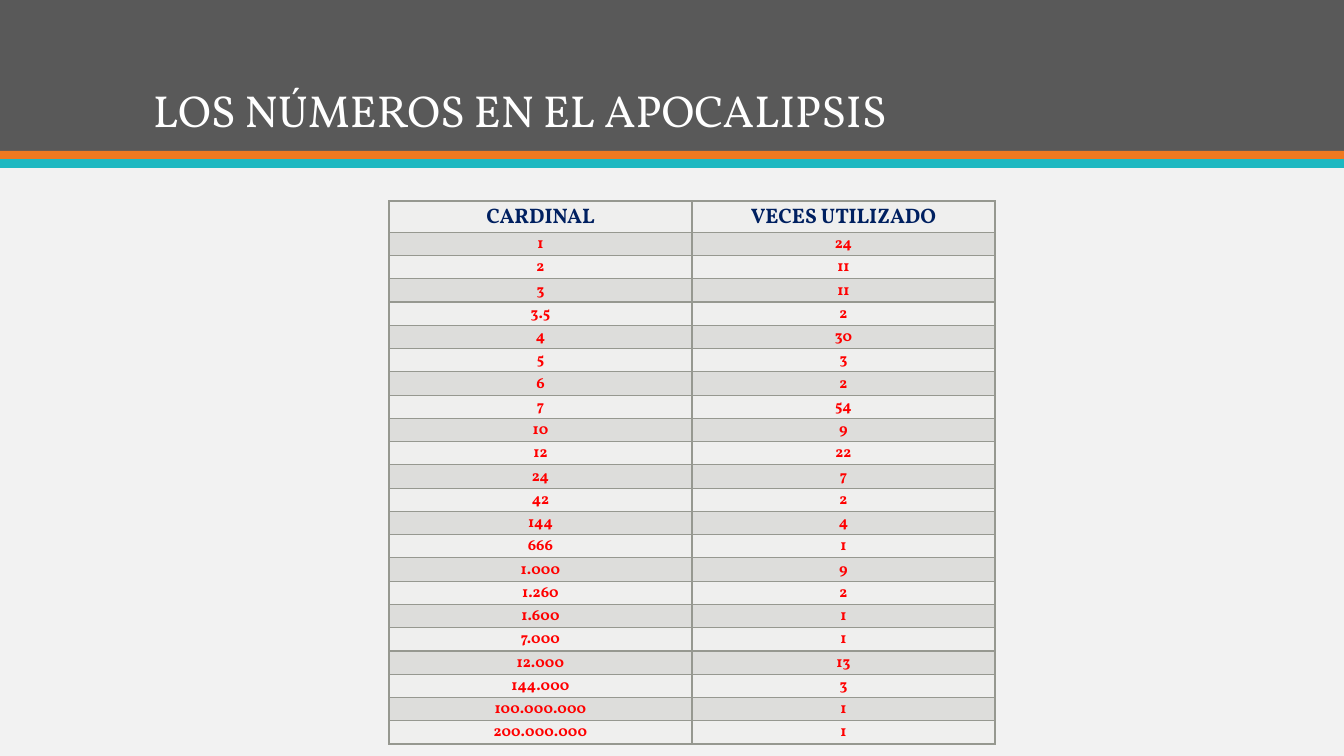
"""Build the slide on the numbers used in the Apocalypse."""
from lxml import etree
from pptx import Presentation
from pptx.dml.color import RGBColor
from pptx.enum.shapes import MSO_SHAPE
from pptx.enum.text import MSO_ANCHOR, MSO_AUTO_SIZE, PP_ALIGN
from pptx.oxml.ns import qn
from pptx.util import Emu, Pt

RECTANGLE = MSO_SHAPE.RECTANGLE
BOTTOM = MSO_ANCHOR.BOTTOM
NO_AUTOFIT = MSO_AUTO_SIZE.NONE
LEFT, CENTER = PP_ALIGN.LEFT, PP_ALIGN.CENTER
EMU_PER_PX = 914400 / 100.8
PAGE_WIDTH, PAGE_HEIGHT = 1344, 756
TITLE_ONLY = 5
FONT = "Vollkorn"
COLORS = {
    "background": "F2F2F2",
    "banner": "595959",
    "orange": "EF7920",
    "teal": "1EB8C1",
    "title": "FFFFFF",
    "heading": "002060",
    "number": "FF0000",
    "light_row": "EFEFEE",
    "dark_row": "DDDDDB",
    "border": "969890",
}
BANDS = [("banner", 0, 151), ("orange", 151, 8), ("teal", 159, 9)]
HEADINGS = ("CARDINAL", "VECES UTILIZADO")
NUMBER_USES = [
    ("1", "24"), ("2", "11"), ("3", "11"), ("3.5", "2"), ("4", "30"),
    ("5", "3"), ("6", "2"), ("7", "54"), ("10", "9"), ("12", "22"),
    ("24", "7"), ("42", "2"), ("144", "4"), ("666", "1"), ("1.000", "9"),
    ("1.260", "2"), ("1.600", "1"), ("7.000", "1"), ("12.000", "13"),
    ("144.000", "3"), ("100.000.000", "1"), ("200.000.000", "1"),
]


def px(length):
    """Turn pixels into EMU."""
    return Emu(round(length * EMU_PER_PX))


def color(name):
    """Look up a named colour."""
    return RGBColor.from_string(COLORS[name])


def style_paragraph(para, size, color_name, bold, align, spacing):
    """Format a whole paragraph."""
    para.alignment = align
    para.line_spacing = spacing
    para.font.name = FONT
    para.font.size = Pt(size)
    para.font.bold = bold
    para.font.color.rgb = color(color_name)


def add_band(page, color_name, top, height):
    """Add a full-width coloured band."""
    band = page.shapes.add_shape(RECTANGLE, 0, px(top), px(PAGE_WIDTH), px(height))
    band.shadow.inherit = False
    band.fill.solid()
    band.fill.fore_color.rgb = color(color_name)
    band.line.fill.background()


def place_title(page, text):
    """Place the title in front of the banner."""
    title = page.shapes.title
    page.shapes.element.append(title.element)
    title.left, title.top, title.width, title.height = map(px, (143, 28, 1058, 114))
    frame = title.text_frame
    frame.text = text
    frame.word_wrap = True
    frame.auto_size = NO_AUTOFIT
    frame.vertical_anchor = BOTTOM
    style_paragraph(frame.paragraphs[0], 32, "title", False, LEFT, 0.9)


def add_borders(cell):
    """Draw a thin line on all four sides of a cell."""
    properties = cell._tc.get_or_add_tcPr()
    for position, side in enumerate(("a:lnL", "a:lnR", "a:lnT", "a:lnB")):
        line = etree.Element(qn(side), w=str(Pt(1)))
        fill = etree.SubElement(line, qn("a:solidFill"))
        etree.SubElement(fill, qn("a:srgbClr"), val=COLORS["border"])
        properties.insert(position, line)


def fill_cell(cell, text, size, text_color, fill_color):
    """Write and format one table cell."""
    cell.margin_left = cell.margin_right = px(7)
    cell.margin_top = cell.margin_bottom = 0
    cell.fill.solid()
    cell.fill.fore_color.rgb = color(fill_color)
    add_borders(cell)
    cell.text = text
    style_paragraph(cell.text_frame.paragraphs[0], size, text_color, True, CENTER, 1.07)


def add_number_table(page, rows):
    """Add the table with a heading row and alternating row fills."""
    heading_height, row_height, column_width = 29, 22, 303
    height = heading_height + row_height * (len(rows) - 1)
    table = page.shapes.add_table(
        len(rows), 2, px(389), px(201), px(2 * column_width), px(height)
    ).table
    table.horz_banding = False
    for column in table.columns:
        column.width = px(column_width)
    for index, texts in enumerate(rows):
        is_heading = index == 0
        table.rows[index].height = px(heading_height if is_heading else row_height)
        size, text_color = (15, "heading") if is_heading else (11, "number")
        fill_color = "dark_row" if index % 2 else "light_row"
        for cell, text in zip(table.rows[index].cells, texts):
            fill_cell(cell, text, size, text_color, fill_color)


def main():
    """Build and save the deck."""
    deck = Presentation()
    deck.slide_width, deck.slide_height = px(PAGE_WIDTH), px(PAGE_HEIGHT)
    page = deck.slides.add_slide(deck.slide_layouts[TITLE_ONLY])
    page.background.fill.solid()
    page.background.fill.fore_color.rgb = color("background")
    for band in BANDS:
        add_band(page, *band)
    place_title(page, "LOS NÚMEROS EN EL APOCALIPSIS")
    add_number_table(page, [HEADINGS, *NUMBER_USES])
    deck.save("out.pptx")


if __name__ == "__main__":
    main()
